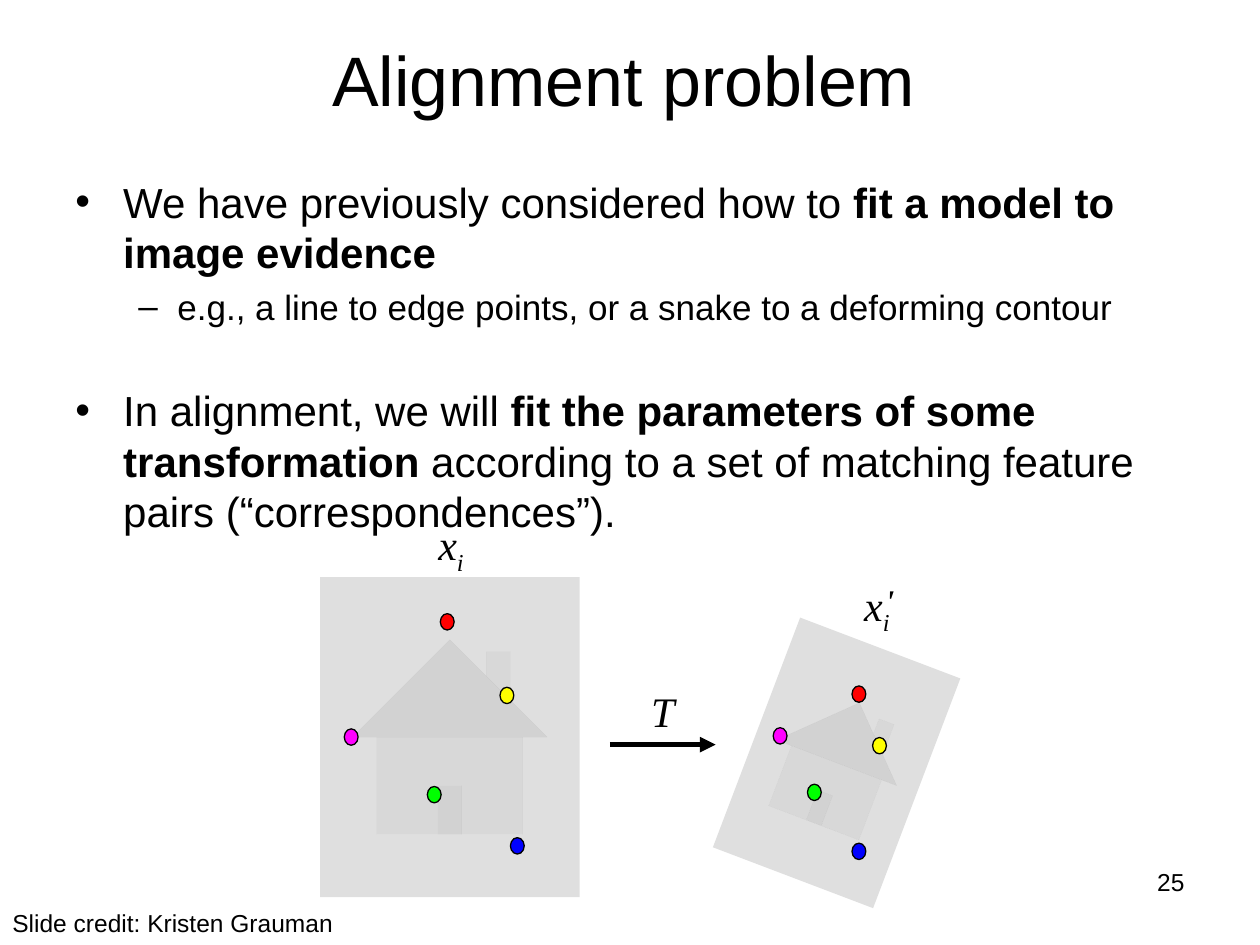
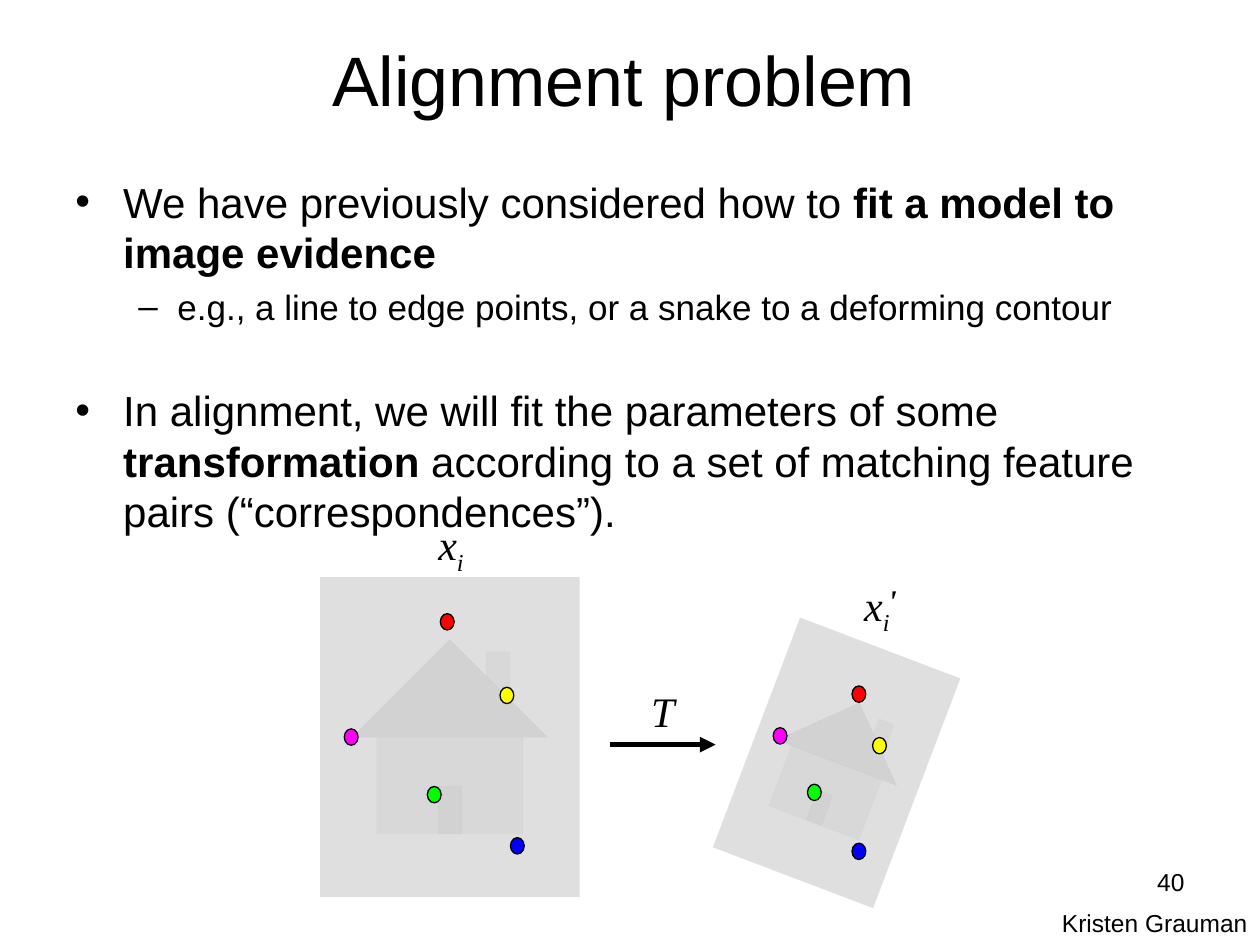
from dataclasses import dataclass
from lxml.etree import SubElement
from pptx import Presentation
from pptx.dml.color import RGBColor
from pptx.enum.shapes import MSO_CONNECTOR, MSO_SHAPE
from pptx.enum.text import MSO_ANCHOR, MSO_AUTO_SIZE, PP_ALIGN
from pptx.oxml.ns import qn
from pptx.util import Inches, Pt

CELL = 0.1


@dataclass(frozen=True)
class Theme:
    sans: str = "Arial"
    serif: str = "Times New Roman"
    ink: str = "000000"
    house: str = "808080"
    house_opacity: int = 25
    dots: tuple = ("FF0000", "0000FF", "00FF00", "FF00FF", "FFFF00")
    title: int = 40
    body: int = 24
    detail: int = 20
    prime: int = 18
    footer: int = 14
    outline: float = 0.75
    arrow: float = 3


@dataclass(frozen=True)
class Box:
    column: float
    row: float
    columns: float
    rows: float

    def inside(self, column, row, columns, rows):
        return Box(self.column + column, self.row + row, columns, rows)

    def point(self, across, down):
        return self.column + across * self.columns, self.row + down * self.rows

    def inches(self):
        return [Inches(value * CELL) for value in (self.column, self.row, self.columns, self.rows)]


@dataclass(frozen=True)
class Bullet:
    mark: str
    size: int
    margin: float
    hang: float
    before: float
    spans: tuple


THEME = Theme()
SLIDE = Box(0, 0, 100, 75)
TITLE = SLIDE.inside(4.5, 0, 90, 12.5)
BODY = SLIDE.inside(5, 13.5, 90, 32)
DIAGRAM = SLIDE.inside(25, 40, 50, 32)
NUMBER = SLIDE.inside(71.7, 68.3, 23.3, 5.2)

FIRST_DOTS = ((0.49, 0.14), (0.76, 0.84), (0.44, 0.68), (0.12, 0.5), (0.72, 0.37))
MOVED_DOTS = ((0.63, 0.22), (0.63, 0.86), (0.37, 0.62), (0.17, 0.39), (0.75, 0.43))


def rgb(color):
    return RGBColor.from_string(color)


def add_span(para, text, size, font=THEME.sans, bold=False, italic=False, baseline=0):
    span = para.add_run()
    span.text = text
    span.font.name = font
    span.font.size = Pt(size)
    span.font.bold = bold
    span.font.italic = italic
    span.font.color.rgb = rgb(THEME.ink)
    if baseline:
        span.font._element.set("baseline", str(baseline * 1000))


def add_frame(page, box, wrap=True, grow=False):
    frame = page.shapes.add_textbox(*box.inches()).text_frame
    frame.word_wrap = wrap
    frame.auto_size = MSO_AUTO_SIZE.SHAPE_TO_FIT_TEXT if grow else MSO_AUTO_SIZE.NONE
    return frame


def add_title(page, box, text):
    frame = add_frame(page, box)
    frame.vertical_anchor = MSO_ANCHOR.MIDDLE
    para = frame.paragraphs[0]
    para.alignment = PP_ALIGN.CENTER
    add_span(para, text, THEME.title)


def add_bullets(page, box, bullets):
    frame = add_frame(page, box)
    for index, bullet in enumerate(bullets):
        para = frame.add_paragraph() if index else frame.paragraphs[0]
        properties = para._p.get_or_add_pPr()
        properties.set("marL", str(Inches(bullet.margin)))
        properties.set("indent", str(-Inches(bullet.hang)))
        if index:
            para.space_before = Pt(bullet.before)
        SubElement(properties, qn("a:buFont"), typeface=THEME.sans)
        SubElement(properties, qn("a:buChar"), char=bullet.mark)
        for text, bold in bullet.spans:
            add_span(para, text, bullet.size, bold=bold)


def add_filled(page, kind, box, color):
    shape = page.shapes.add_shape(kind, *box.inches())
    shape.shadow.inherit = False
    shape.fill.solid()
    shape.fill.fore_color.rgb = rgb(color)
    return shape


def add_house(page, box, dots, rotation=0):
    house = add_filled(page, MSO_SHAPE.ACTION_BUTTON_HOME, box, THEME.house)
    house.line.fill.background()
    house.rotation = rotation
    color = house._element.spPr.find(qn("a:solidFill"))[0]
    SubElement(color, qn("a:alpha"), val=str(THEME.house_opacity * 1000))
    width, height = 1.1, 1.3
    for color, (across, down) in zip(THEME.dots, dots):
        column, row = box.point(across, down)
        spot = Box(column - width / 2, row - height / 2, width, height)
        dot = add_filled(page, MSO_SHAPE.OVAL, spot, color)
        dot.line.color.rgb = rgb(THEME.ink)
        dot.line.width = Pt(THEME.outline)


def add_arrow(page, box):
    left, top, width, height = box.inches()
    arrow = page.shapes.add_connector(MSO_CONNECTOR.STRAIGHT, left, top, left + width, top + height)
    arrow.line.color.rgb = rgb(THEME.ink)
    arrow.line.width = Pt(THEME.arrow)
    SubElement(arrow.line._get_or_add_ln(), qn("a:tailEnd"), type="triangle")
    SubElement(arrow._element.spPr, qn("a:effectLst"))


def add_symbol(page, box, letter, index="", size=THEME.body, bold=False):
    para = add_frame(page, box, wrap=False, grow=True).paragraphs[0]
    add_span(para, letter, size, THEME.serif, bold, True)
    if index:
        add_span(para, index, size, THEME.serif, bold, True, -25)


def add_diagram(page, box, prime_column):
    add_arrow(page, box.inside(23.4, 19.1, 8.4, 0))
    add_house(page, box.inside(0.4, 5.8, 20.6, 25.4), FIRST_DOTS)
    add_house(page, box.inside(34.6, 10.8, 13.6, 19.5), MOVED_DOTS, 20.8)
    add_symbol(page, box.inside(25.7, 13.9, 3.9, 5), "T")
    add_symbol(page, box.inside(8.8, 0.7, 4.1, 5), "x", "i")
    add_symbol(page, box.inside(42.6, 5.5, 4.1, 5), "x", "i")
    add_symbol(page, box.inside(prime_column, 5.6, 2.7, 4), "'", size=THEME.prime, bold=True)


def add_footer(page, credit_box, credit, number):
    add_span(add_frame(page, credit_box, grow=True).paragraphs[0], credit, THEME.footer)
    para = add_frame(page, NUMBER).paragraphs[0]
    para.alignment = PP_ALIGN.RIGHT
    add_span(para, number, THEME.footer)


def add_alignment_page(deck, goal, prime_column, credit_box, credit, number):
    page = deck.slides.add_slide(deck.slide_layouts[6])
    add_title(page, TITLE, "Alignment problem")
    add_bullets(page, BODY, (
        Bullet("•", THEME.body, 0.38, 0.38, 0, (
            ("We have previously considered how to ", False),
            ("fit a model to image evidence", True))),
        Bullet("–", THEME.detail, 0.81, 0.31, 4.6, (
            ("e.g., a line to edge points, or a snake to a deforming contour", False),)),
        Bullet("•", THEME.body, 0.38, 0.38, 33, goal + (
            (" according to a set of matching feature pairs (“correspondences”).", False),)),
    ))
    add_diagram(page, DIAGRAM, prime_column)
    add_footer(page, credit_box, credit, number)


def main():
    deck = Presentation()
    deck.slide_width, deck.slide_height = SLIDE.inches()[2:]
    add_alignment_page(
        deck,
        (("In alignment, we will ", False), ("fit the parameters of some transformation", True)),
        44.3, SLIDE.inside(0, 71.6, 35, 3.4), "Slide credit: Kristen Grauman", "25")
    add_alignment_page(
        deck,
        (("In alignment, we will fit the parameters of some ", False), ("transformation", True)),
        44.5, SLIDE.inside(83.3, 71.6, 24.2, 3.4), "Kristen Grauman", "40")
    deck.save("out.pptx")


if __name__ == "__main__":
    main()
